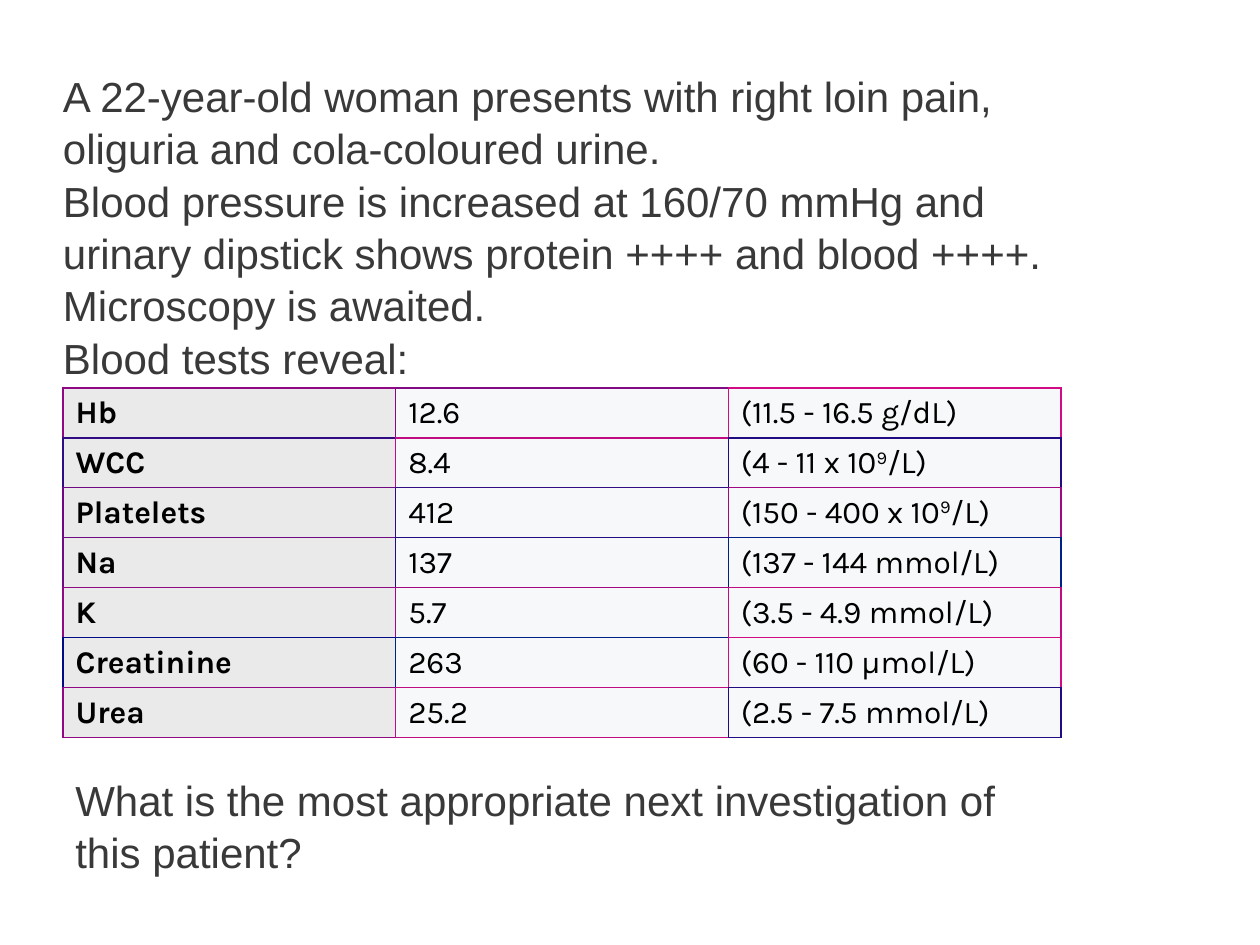
from lxml import etree
from pptx import Presentation
from pptx import util as u
from pptx.dml.color import RGBColor
from pptx.enum import text
from pptx.oxml import ns

PX = 914400 / 126  # EMU per px

GREY = RGBColor(0x39, 0x39, 0x39)
BLACK = RGBColor(0x00, 0x00, 0x00)
LABEL_FILL = RGBColor(0xEB, 0xEA, 0xEA)
VALUE_FILL = RGBColor(0xF7, 0xF8, 0xF9)
PLUM = RGBColor(0x90, 0x08, 0x83)
PURPLE = RGBColor(0x80, 0x0B, 0x83)
VIOLET = RGBColor(0x70, 0x08, 0x83)
VIOLET_2 = RGBColor(0x70, 0x0B, 0x83)
PLUM_2 = RGBColor(0x90, 0x0B, 0x83)
INDIGO = RGBColor(0x30, 0x0B, 0x83)
DEEP_INDIGO = RGBColor(0x20, 0x0B, 0x83)
NAVY = RGBColor(0x00, 0x0C, 0x83)
BLUE = RGBColor(0x00, 0x20, 0x85)
MAGENTA = RGBColor(0xA0, 0x07, 0x83)
ROSE = RGBColor(0xC0, 0x0B, 0x83)
PINK = RGBColor(0xD0, 0x0B, 0x83)

CASE = [
    "A 22-year-old woman presents with right loin pain, oliguria and cola-coloured urine.",
    "Blood pressure is increased at 160/70 mmHg and urinary dipstick shows "
    "protein ++++ and blood ++++. Microscopy is awaited.",
    "Blood tests reveal:",
]
QUESTION = ["What is the most appropriate next investigation of this patient?"]

# A caret pair marks a superscript
RESULTS = [
    ("Hb", "12.6", "(11.5 - 16.5 g/dL)"),
    ("WCC", "8.4", "(4 - 11 x 10^9^/L)"),
    ("Platelets", "412", "(150 - 400 x 10^9^/L)"),
    ("Na", "137", "(137 - 144 mmol/L)"),
    ("K", "5.7", "(3.5 - 4.9 mmol/L)"),
    ("Creatinine", "263", "(60 - 110 μmol/L)"),
    ("Urea", "25.2", "(2.5 - 7.5 mmol/L)"),
]
# Left and top border colour of each cell
EDGES = [
    (PLUM, PURPLE, PINK),
    (INDIGO, ROSE, DEEP_INDIGO),
    (VIOLET, INDIGO, MAGENTA),
    (VIOLET_2, DEEP_INDIGO, BLUE),
    (PLUM_2, MAGENTA, ROSE),
    (NAVY, BLUE, PINK),
    (PLUM, ROSE, DEEP_INDIGO),
]


def px(n):
    return u.Emu(round(n * PX))


def write(tf, lines, size=24, font="Arial", color=GREY, bold=False, spacing=None):
    for i, line in enumerate(lines):
        p = tf.paragraphs[0] if i == 0 else tf.add_paragraph()
        p.line_spacing = spacing
        for j, part in enumerate(line.split("^")):
            r = p.add_run()
            r.text = part
            r.font.size, r.font.name, r.font.bold = u.Pt(size), font, bold
            r.font.color.rgb = color
            if j % 2:
                r.font._element.set("baseline", "30000")


def add_text(s, lines, x, y, w, h, inset=None, anchor=text.MSO_ANCHOR.TOP):
    tf = s.shapes.add_textbox(px(x), px(y), px(w), px(h)).text_frame
    tf.word_wrap = True
    tf.auto_size = text.MSO_AUTO_SIZE.SHAPE_TO_FIT_TEXT
    tf.vertical_anchor = anchor
    if inset is not None:
        tf.margin_left = tf.margin_top = tf.margin_right = tf.margin_bottom = inset
    write(tf, lines, spacing=1.04)


def set_borders(cell, **colors):
    tc_pr = cell._tc.get_or_add_tcPr()
    for i, side in enumerate("LRTB"):
        ln = etree.Element(ns.qn(f"a:ln{side}"), w=str(u.Pt(0.75)))
        fill = etree.SubElement(ln, ns.qn("a:solidFill"))
        etree.SubElement(fill, ns.qn("a:srgbClr"), val=str(colors[side]))
        tc_pr.insert(i, ln)  # borders come before the fill


def add_results(s, x, y, w, row_h):
    rows, cols = len(RESULTS), len(RESULTS[0])
    table = s.shapes.add_table(rows, cols, px(x), px(y), px(w), px(row_h * rows)).table
    table.first_row = table.horz_banding = False
    for i, row in enumerate(RESULTS):
        table.rows[i].height = px(row_h)
        for j, value in enumerate(row):
            cell = table.cell(i, j)
            is_label = j == 0
            cell.vertical_anchor = text.MSO_ANCHOR.MIDDLE
            cell.fill.solid()
            cell.fill.fore_color.rgb = LABEL_FILL if is_label else VALUE_FILL
            write(cell.text_frame, [value], size=18, font="Karla", color=BLACK, bold=is_label)
            # Right and bottom borders match the next cell's left and top
            edge = EDGES[i][j]
            set_borders(cell, L=edge, T=edge,
                        R=EDGES[i][min(j + 1, cols - 1)],
                        B=EDGES[min(i + 1, rows - 1)][j])


def main():
    prs = Presentation()
    prs.slide_width, prs.slide_height = px(1260), px(945)
    s = prs.slides.add_slide(prs.slide_layouts[6])

    # Blood results
    add_results(s, 63, 388, 998, 50)
    # Case history
    add_text(s, CASE, 63, 73, 998, 305, inset=0, anchor=text.MSO_ANCHOR.MIDDLE)
    # Question
    add_text(s, QUESTION, 63, 766, 998, 115)

    prs.save("out.pptx")


if __name__ == "__main__":
    main()
